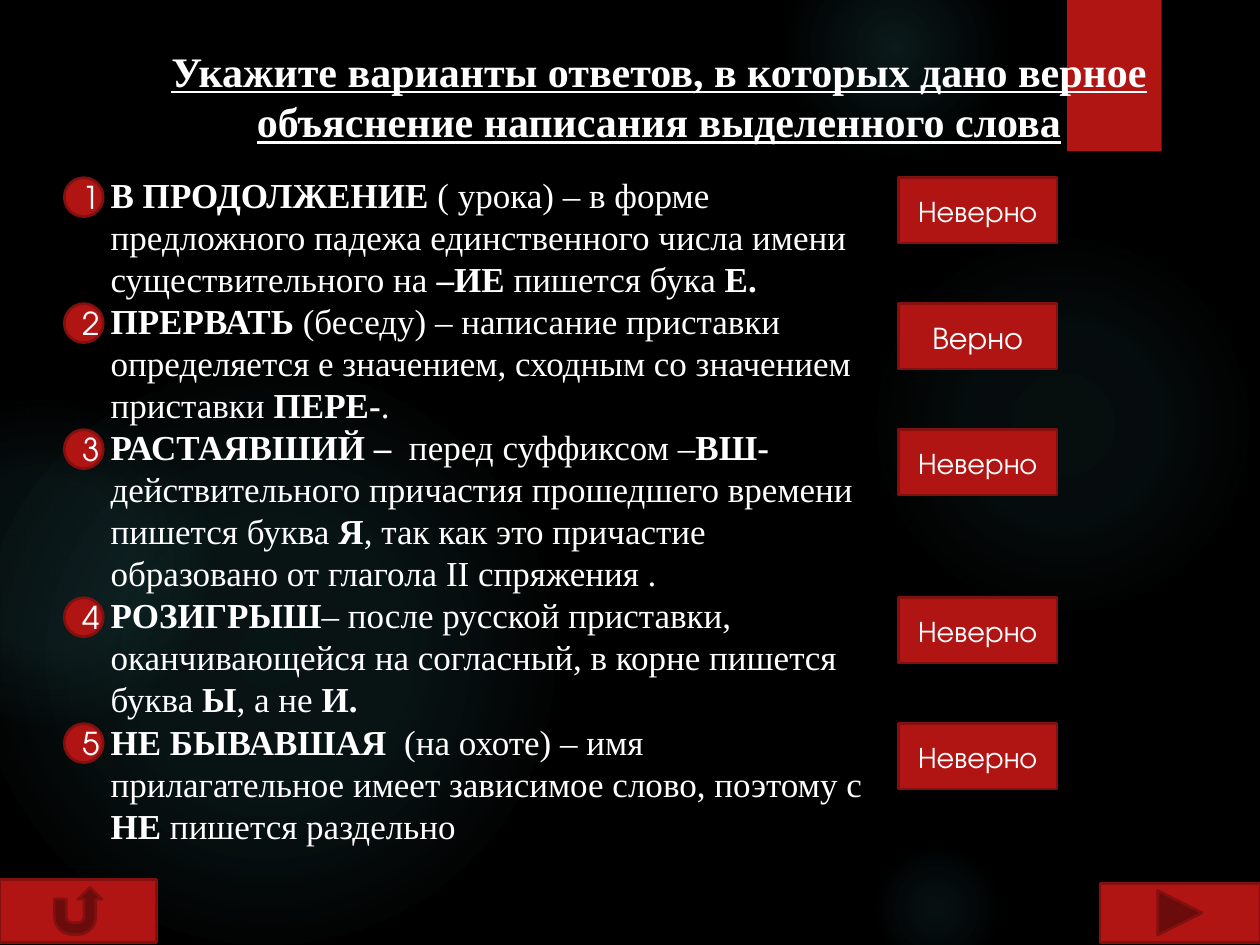
import itertools

import lxml.etree
import pptx
import pptx.dml.color
import pptx.enum.shapes
import pptx.enum.text
import pptx.oxml.ns
import pptx.util

RGBColor = pptx.dml.color.RGBColor
SHAPE = pptx.enum.shapes.MSO_SHAPE
ALIGN = pptx.enum.text.PP_ALIGN
ANCHOR = pptx.enum.text.MSO_ANCHOR

BLACK = RGBColor(0x00, 0x00, 0x00)
WHITE = RGBColor(0xFF, 0xFF, 0xFF)
RED = RGBColor(0xB0, 0x15, 0x13)
DARK_RED = RGBColor(0x82, 0x10, 0x0E)
TEAL = RGBColor(0x50, 0xB9, 0xC1)

SERIF = "Times New Roman"
SANS = "TeX Gyre Adventor"

COLUMNS, ROWS = 100, 75
SLIDE_WIDTH = pptx.util.Inches(10)
SLIDE_HEIGHT = pptx.util.Inches(7.5)
TEXT_LINE = 10 / 3

TITLE = ("Укажите варианты ответов, в которых дано верное "
         "объяснение написания выделенного слова")

BOLD_MARK = "*"
STATEMENTS = [
    ("*В ПРОДОЛЖЕНИЕ *( урока) – в форме предложного падежа единственного числа "
     "имени существительного на *–ИЕ *пишется бука *Е.*", 3, "Неверно"),
    ("*ПРЕРВАТЬ* (беседу) – написание приставки определяется е значением, "
     "сходным со значением приставки *ПЕРЕ-*.", 3, "Верно"),
    ("*РАСТАЯВШИЙ – * перед суффиксом –*ВШ-* действительного причастия прошедшего "
     "времени пишется буква *Я*, так как это причастие образовано от глагола "
     "II спряжения .", 4, "Неверно"),
    ("*РОЗИГРЫШ*– после русской приставки, оканчивающейся на согласный, в корне "
     "пишется буква *Ы*, а не *И.*", 3, "Неверно"),
    ("*НЕ БЫВАВШАЯ * (на охоте) – имя прилагательное имеет зависимое слово, "
     "поэтому с *НЕ* пишется раздельно", 3, "Неверно"),
]

GLOWS = [
    ((68.9, 18.3, 30.8), ((0, 7), (36, 6), (69, 0))),
    ((62.2, -5, 17.5), ((0, 14), (36, 7), (73, 0))),
    ((68.9, 66.7, 10.8), ((0, 9), (36, 5), (66, 0))),
    ((-1.7, 29.2, 45.8), ((0, 11), (36, 10), (75, 0))),
    ((-9.2, 31.7, 25.8), ((0, 8), (36, 8), (72, 0))),
]


def on_grid(box):
    left, top, width, height = box
    column, row = SLIDE_WIDTH / COLUMNS, SLIDE_HEIGHT / ROWS
    return [int(length) for length in
            (left * column, top * row, width * column, height * row)]


def set_font(paragraph, name, size):
    paragraph.font.name = name
    paragraph.font.size = pptx.util.Pt(size)
    paragraph.font.color.rgb = WHITE


def add_block(slide, kind, box, outlined=True):
    block = slide.shapes.add_shape(kind, *on_grid(box))
    block.shadow.inherit = False
    block.fill.solid()
    block.fill.fore_color.rgb = RED
    if outlined:
        block.line.color.rgb = DARK_RED
        block.line.width = pptx.util.Pt(1.5)
    else:
        block.line.fill.background()
    return block


def add_label(slide, kind, box, label, size):
    frame = add_block(slide, kind, box).text_frame
    frame.vertical_anchor = ANCHOR.MIDDLE
    paragraph = frame.paragraphs[0]
    paragraph.text = label
    paragraph.alignment = ALIGN.CENTER
    set_font(paragraph, SANS, size)


def add_text_area(slide, box):
    frame = slide.shapes.add_textbox(*on_grid(box)).text_frame
    frame.word_wrap = True
    return frame


def add_glow(slide, box, stops):
    glow = slide.shapes.add_shape(SHAPE.OVAL, *on_grid(box))
    glow.shadow.inherit = False
    glow.line.fill.background()
    glow.fill.background()
    stop_list = "".join(
        f'<a:gs pos="{position * 1000}"><a:srgbClr val="{TEAL}">'
        f'<a:alpha val="{opacity * 1000}"/></a:srgbClr></a:gs>'
        for position, opacity in stops)
    gradient = lxml.etree.fromstring(
        f'<a:gradFill {pptx.oxml.ns.nsdecls("a")} rotWithShape="1">'
        f'<a:gsLst>{stop_list}</a:gsLst><a:path path="circle">'
        '<a:fillToRect l="50000" t="50000" r="50000" b="50000"/>'
        '</a:path></a:gradFill>')
    properties = glow.element.spPr
    empty_fill = properties.find(pptx.oxml.ns.qn("a:noFill"))
    properties.replace(empty_fill, gradient)


def add_backdrop(slide):
    slide.background.fill.solid()
    slide.background.fill.fore_color.rgb = BLACK
    for (left, top, diameter), stops in GLOWS:
        add_glow(slide, (left, top, diameter, diameter), stops)
    add_block(slide, SHAPE.RECTANGLE, (84.7, 0, 7.5, 12), outlined=False)


def add_title(slide, box):
    heading = add_text_area(slide, box).paragraphs[0]
    heading.text = TITLE
    heading.alignment = ALIGN.CENTER
    set_font(heading, SERIF, 24)
    heading.font.bold = True
    heading.font.underline = True


def add_statements(slide, box):
    frame = add_text_area(slide, box)
    for index, (statement, _, _) in enumerate(STATEMENTS):
        paragraph = frame.add_paragraph() if index else frame.paragraphs[0]
        set_font(paragraph, SERIF, 20)
        for part, words in enumerate(statement.split(BOLD_MARK)):
            if words:
                run = paragraph.add_run()
                run.text = words
                run.font.bold = part % 2 == 1


def add_markers(slide, box):
    left, top, width, _ = box
    diameter, answer_width, answer_height = 3.1, 12.6, 5.2
    line_counts = [lines for _, lines, _ in STATEMENTS]
    starts = itertools.accumulate(line_counts[:-1], initial=0)
    for number, (start, (_, _, verdict)) in enumerate(zip(starts, STATEMENTS), 1):
        row = top + start * TEXT_LINE
        add_label(slide, SHAPE.OVAL, (left, row, diameter, diameter), str(number), 18)
        answer_left = left + width - answer_width
        add_label(slide, SHAPE.RECTANGLE,
                  (answer_left, row, answer_width, answer_height),
                  verdict, 18 if verdict == "Верно" else 17)


def add_navigation(slide, box):
    left, top, width, height = box
    next_width = 12.7
    add_block(slide, SHAPE.ACTION_BUTTON_FORWARD_OR_NEXT,
              (left + width - next_width, top + 0.3, next_width, height - 0.3))
    add_block(slide, SHAPE.ACTION_BUTTON_RETURN, (left, top, 12.4, height))


def main():
    presentation = pptx.Presentation()
    presentation.slide_width = SLIDE_WIDTH
    presentation.slide_height = SLIDE_HEIGHT
    slide = presentation.slides.add_slide(presentation.slide_layouts[6])
    add_backdrop(slide)
    add_title(slide, (7, 3.1, 90.6, 9.1))
    add_statements(slide, (7.8, 13.3, 62.7, 57.9))
    add_markers(slide, (5.1, 14.1, 78.8, 48.6))
    add_navigation(slide, (0, 69.8, COLUMNS, 5))
    presentation.save("out.pptx")


if __name__ == "__main__":
    main()
